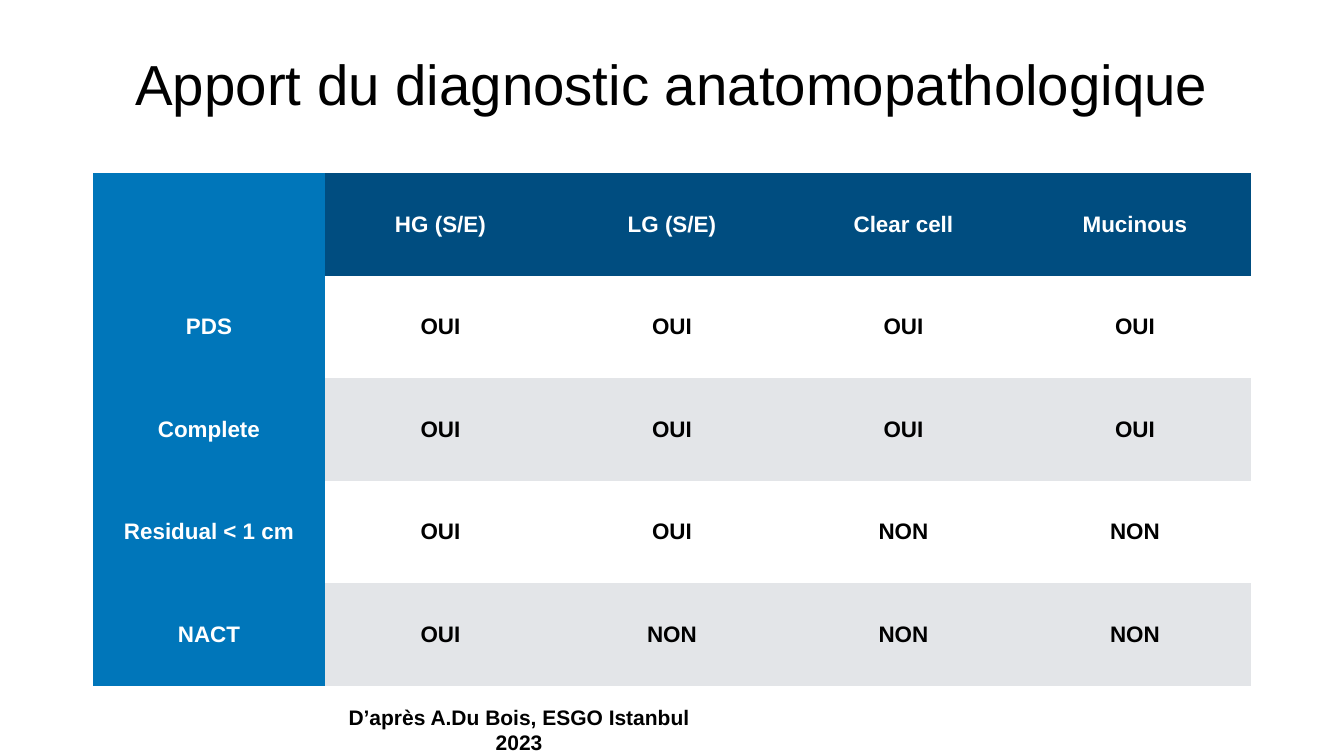
from pptx import Presentation
from pptx.dml.color import RGBColor
from pptx.enum.text import MSO_ANCHOR, MSO_AUTO_SIZE, PP_ALIGN
from pptx.oxml.ns import qn
from pptx.util import Inches, Pt

CENTER, MIDDLE = PP_ALIGN.CENTER, MSO_ANCHOR.MIDDLE
GROW = MSO_AUTO_SIZE.SHAPE_TO_FIT_TEXT
NO_STYLE_NO_GRID = "{2D5ABB26-0587-4C30-8999-92F81FD0307C}"

THEME = {
    "font": "Arial",
    "title_size": 80.6, "table_size": 32, "source_size": 30,
    "ink": "000000", "paper": "FFFFFF",
    "header": "004D80", "side": "0076BA", "band": "E3E5E8",
}
INSET = Inches(0.06)
ROWS = [
    ["", "HG (S/E)", "LG (S/E)", "Clear cell", "Mucinous"],
    ["PDS", "OUI", "OUI", "OUI", "OUI"],
    ["Complete", "OUI", "OUI", "OUI", "OUI"],
    ["Residual < 1 cm", "OUI", "OUI", "NON", "NON"],
    ["NACT", "OUI", "NON", "NON", "NON"],
]


def write(tf, text, size, color, bold=True):
    p = tf.paragraphs[0]
    p.alignment = CENTER
    r = p.add_run()
    r.text = text
    for name, value in {"name": THEME["font"], "size": Pt(size), "bold": bold}.items():
        setattr(r.font, name, value)
    r.font.color.rgb = RGBColor.from_string(THEME[color])


def set_frame(frame):
    """Give a text frame or table cell the common insets and anchor."""
    for side in ("left", "right", "top", "bottom"):
        setattr(frame, f"margin_{side}", INSET)
    frame.vertical_anchor = MIDDLE


prs = Presentation()
prs.slide_width, prs.slide_height = Inches(26.67), Inches(15)
s = prs.slides.add_slide(prs.slide_layouts[6])

margin = Inches(1.85)
content_w = prs.slide_width - 2 * margin
col_w = content_w // len(ROWS[0])
row_h = Inches(10.17) // len(ROWS)

# Title
title = s.shapes.add_textbox(margin, Inches(0.39), content_w, Inches(2.5))
set_frame(title.text_frame)
title.text_frame.word_wrap = True
write(title.text_frame, "Apport du diagnostic anatomopathologique",
      THEME["title_size"], "ink", bold=False)

# Table of surgical options by histology
table = s.shapes.add_table(len(ROWS), len(ROWS[0]), margin, Inches(3.44),
                           content_w, row_h * len(ROWS)).table
table._tbl.tblPr.find(qn("a:tableStyleId")).text = NO_STYLE_NO_GRID
table.first_col = True
for column in table.columns:
    column.width = col_w
for i, row in enumerate(ROWS):
    table.rows[i].height = row_h
    for j, text in enumerate(row):
        cell = table.cell(i, j)
        set_frame(cell)
        if j == 0:
            fill = "side"
        elif i == 0:
            fill = "header"
        else:
            fill = "paper" if i % 2 else "band"
        cell.fill.solid()
        cell.fill.fore_color.rgb = RGBColor.from_string(THEME[fill])
        if text:
            write(cell.text_frame, text, THEME["table_size"],
                  "ink" if i and j else "paper")

# Source line
source = s.shapes.add_textbox(Inches(6.35), Inches(14.17), Inches(7.9), Inches(0.61))
set_frame(source.text_frame)
source.text_frame.word_wrap = False
source.text_frame.auto_size = GROW
write(source.text_frame, "D’après A.Du Bois, ESGO Istanbul 2023",
      THEME["source_size"], "ink")

prs.save("out.pptx")
